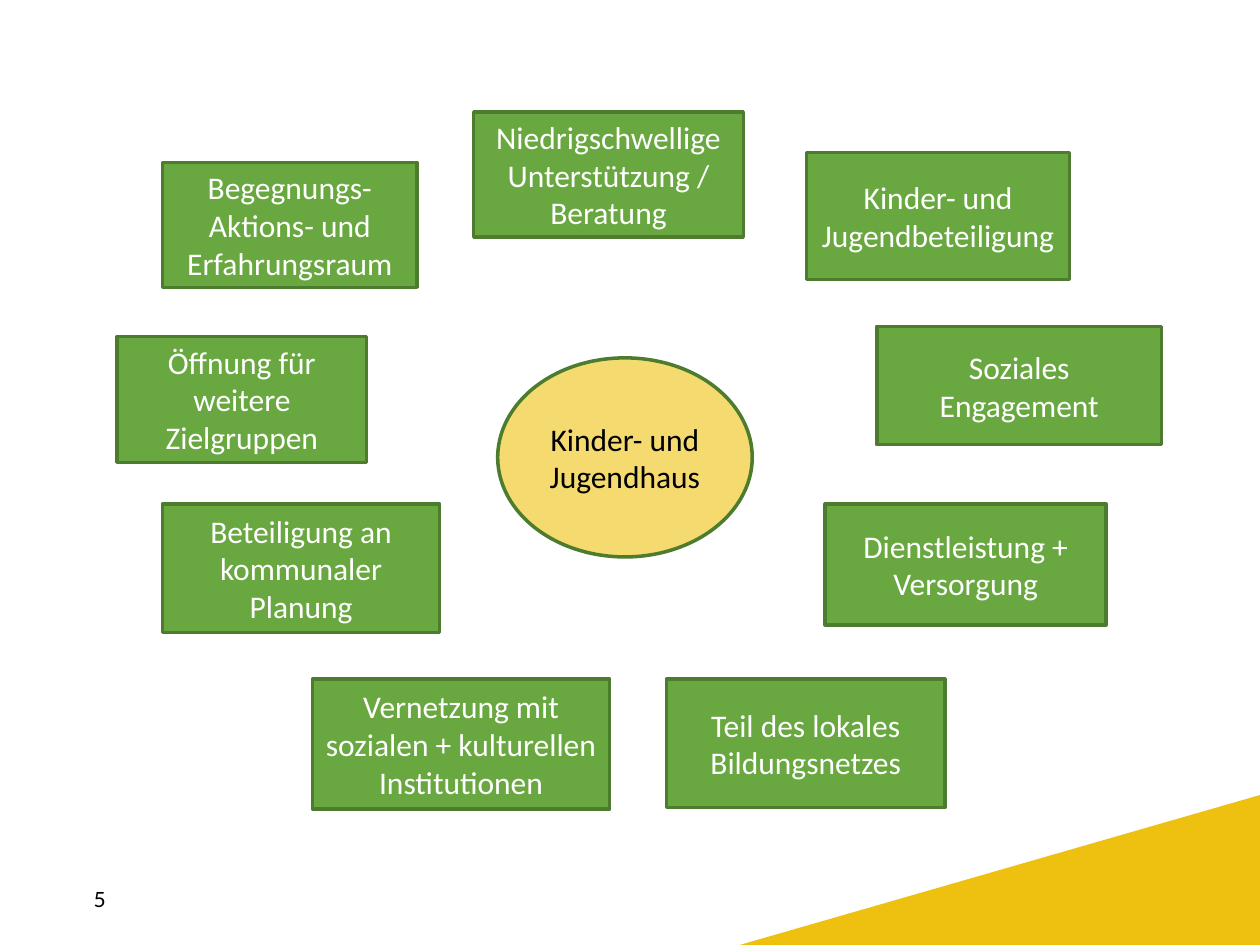
from pptx import Presentation
from pptx.dml.color import RGBColor
from pptx.enum.shapes import MSO_SHAPE as Shape
from pptx.enum.text import MSO_ANCHOR as Anchor, PP_ALIGN as Align
from pptx.util import Inches, Pt

GREEN = RGBColor(0x69, 0xA8, 0x40)
DARK_GREEN = RGBColor(0x4E, 0x7C, 0x2F)
PALE_YELLOW = RGBColor(0xF5, 0xDA, 0x6F)
GOLD = RGBColor(0xEE, 0xC1, 0x10)
WHITE = RGBColor(0xFF, 0xFF, 0xFF)
BLACK = RGBColor(0x00, 0x00, 0x00)

COLUMNS, ROWS = 100, 75


def write_text(frame, text, font="Calibri", size=18, color=WHITE, align=Align.CENTER):
    """Fill a text frame, one paragraph for each line of text."""
    frame.word_wrap = True
    frame.vertical_anchor = Anchor.MIDDLE
    for index, line in enumerate(text.split("\n")):
        paragraph = frame.add_paragraph() if index else frame.paragraphs[0]
        paragraph.alignment = align
        run = paragraph.add_run()
        run.text = line
        run.font.name = font
        run.font.size = Pt(size)
        run.font.color.rgb = color


class SlideBuilder:
    """Holds the style and the slide; places are in columns and rows."""

    def __init__(self, deck):
        self.slide = deck.slides.add_slide(deck.slide_layouts[6])
        self.column = deck.slide_width / COLUMNS
        self.row = deck.slide_height / ROWS

    def place(self, left, top, width, height):
        return (round(left * self.column), round(top * self.row),
                round(width * self.column), round(height * self.row))

    def shape(self, kind, area, fill):
        shape = self.slide.shapes.add_shape(kind, *self.place(*area))
        shape.shadow.inherit = False
        shape.fill.solid()
        shape.fill.fore_color.rgb = fill
        return shape

    def corner(self, area):
        triangle = self.shape(Shape.RIGHT_TRIANGLE, area, GOLD)
        triangle.line.fill.background()
        # Mirror it so the right angle sits in the slide's corner
        triangle._element.spPr.xfrm.set("flipH", "1")

    def topic(self, text, area, kind=Shape.RECTANGLE, fill=GREEN, color=WHITE):
        topic = self.shape(kind, area, fill)
        topic.line.color.rgb = DARK_GREEN
        topic.line.width = Pt(2)
        write_text(topic.text_frame, text, color=color)

    def page_number(self, text, area):
        frame = self.slide.shapes.add_textbox(*self.place(*area)).text_frame
        frame.margin_left = frame.margin_right = 0
        frame.margin_top = frame.margin_bottom = 0
        write_text(frame, text, font="Lato", size=12, color=BLACK, align=Align.RIGHT)


# Topics around the centre, clockwise from the upper left
TOPICS = [
    ("Begegnungs-Aktions- und\nErfahrungsraum", (12.9, 12.9, 20.2, 9.9)),
    ("Niedrigschwellige Unterstützung /\nBeratung", (37.6, 8.9, 21.4, 9.9)),
    ("Kinder- und Jugendbeteiligung", (64, 12.1, 20.9, 10.1)),
    ("Soziales Engagement", (69.6, 25.9, 22.6, 9.4)),
    ("Dienstleistung + Versorgung", (65.5, 40, 22.3, 9.6)),
    ("Teil des lokales Bildungsnetzes", (52.9, 53.9, 22.1, 10.2)),
    ("Vernetzung mit sozialen + kulturellen Institutionen", (24.8, 53.9, 23.6, 10.3)),
    ("Beteiligung an kommunaler Planung", (12.9, 40, 22, 10.2)),
    ("Öffnung für weitere Zielgruppen", (9.3, 26.7, 19.8, 10)),
]


def main():
    deck = Presentation()
    deck.slide_width, deck.slide_height = Inches(10), Inches(7.5)
    builder = SlideBuilder(deck)

    # Page decoration and number
    builder.corner((58.7, 63.1, 41.3, 11.9))
    builder.page_number("5", (3.3, 69.4, 5.1, 3.9))

    # Ring of topics and its centre
    for text, area in TOPICS:
        builder.topic(text, area)
    builder.topic("Kinder- und Jugendhaus", (39.5, 28.4, 20.2, 15.8),
                  kind=Shape.OVAL, fill=PALE_YELLOW, color=BLACK)

    deck.save("out.pptx")


if __name__ == "__main__":
    main()
